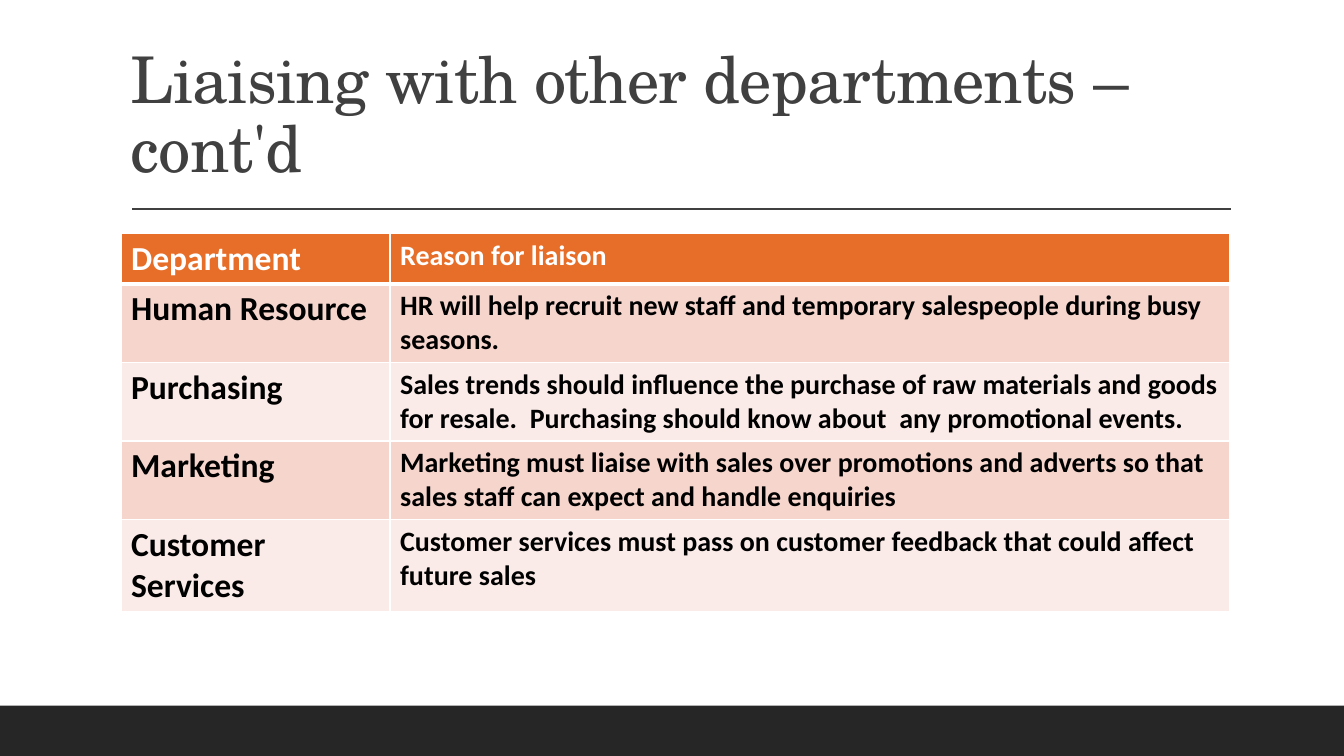
import dataclasses

import lxml.etree
import pptx
import pptx.dml.color
import pptx.enum.shapes
import pptx.enum.text
import pptx.oxml.ns
import pptx.util

Cm = pptx.util.Cm
Pt = pptx.util.Pt

COLOURS = {
    "ink": "404040",
    "footer": "262626",
    "header": "E76E29",
    "odd": "F6D5CD",
    "even": "FAEBE8",
    "white": "FFFFFF",
    "black": "000000",
}
TITLE_FONT = {"name": "TeX Gyre Schola", "size": Pt(46)}
DEPARTMENT_FONT = {"name": "Calibri", "size": Pt(24), "bold": True}
REASON_FONT = {**DEPARTMENT_FONT, "size": Pt(20)}
COLUMN_WIDTHS = (Cm(6.78), Cm(21.16))


@dataclasses.dataclass(frozen=True)
class Liaison:
    department: str
    reason: str
    height: float


LIAISONS = (
    Liaison("Department", "Reason for liaison", 1.27),
    Liaison(
        "Human Resource ",
        "HR will help recruit new staff and temporary salespeople during busy seasons.",
        1.98,
    ),
    Liaison(
        "Purchasing",
        "Sales trends should influence the purchase of raw materials and goods for resale.  "
        "Purchasing should know about  any promotional events.",
        1.98,
    ),
    Liaison(
        "Marketing",
        "Marketing must liaise with sales over promotions and adverts so that "
        "sales staff can expect and handle enquiries",
        1.98,
    ),
    Liaison(
        "Customer Services",
        "Customer services must pass on customer feedback that could affect future sales",
        2.32,
    ),
)


def rgb(colour: str) -> pptx.dml.color.RGBColor:
    return pptx.dml.color.RGBColor.from_string(COLOURS[colour])


def write(frame, text: str, font: dict, colour: str):
    run = frame.paragraphs[0].add_run()
    run.text = text
    for attribute, value in font.items():
        setattr(run.font, attribute, value)
    run.font.color.rgb = rgb(colour)
    return run


def add_borders(cell, bottom: float) -> None:
    qn = pptx.oxml.ns.qn
    properties = cell._tc.get_or_add_tcPr()
    for side, width in {"L": 1, "R": 1, "T": 1, "B": bottom}.items():
        border = lxml.etree.SubElement(properties, qn(f"a:ln{side}"), w=str(Pt(width)))
        solid = lxml.etree.SubElement(border, qn("a:solidFill"))
        lxml.etree.SubElement(solid, qn("a:srgbClr"), val=COLOURS["white"])


def add_footer(slide, width: int, height: int) -> None:
    band = Cm(1.27)
    footer = slide.shapes.add_shape(
        pptx.enum.shapes.MSO_SHAPE.RECTANGLE, 0, height - band, width, band
    )
    footer.shadow.inherit = False
    footer.fill.solid()
    footer.fill.fore_color.rgb = rgb("footer")
    footer.line.fill.background()


def add_title(slide) -> None:
    rule = slide.shapes.add_connector(
        pptx.enum.shapes.MSO_CONNECTOR.STRAIGHT, Cm(3.33), Cm(5.27), Cm(31.01), Cm(5.27)
    )
    rule.line.color.rgb = rgb("ink")
    rule.line.width = Pt(1)
    lxml.etree.SubElement(rule._element.spPr, pptx.oxml.ns.qn("a:effectLst"))

    title = slide.shapes.add_textbox(Cm(3.05), Cm(0.79), Cm(27.94), Cm(4.04)).text_frame
    title.word_wrap = True
    title.vertical_anchor = pptx.enum.text.MSO_ANCHOR.BOTTOM
    title.paragraphs[0].line_spacing = 0.9
    heading = write(title, "Liaising with other departments – cont'd", TITLE_FONT, "ink")
    heading._r.get_or_add_rPr().set("spc", "-50")


def add_liaisons(slide) -> None:
    table = slide.shapes.add_table(
        len(LIAISONS),
        len(COLUMN_WIDTHS),
        Cm(3.05),
        Cm(5.88),
        sum(COLUMN_WIDTHS),
        Cm(sum(liaison.height for liaison in LIAISONS)),
    ).table
    for column, width in zip(table.columns, COLUMN_WIDTHS):
        column.width = width
    for index, liaison in enumerate(LIAISONS):
        table.rows[index].height = Cm(liaison.height)
        is_header = index == 0
        fill = "header" if is_header else "odd" if index % 2 else "even"
        entries = ((liaison.department, DEPARTMENT_FONT), (liaison.reason, REASON_FONT))
        for cell, (text, font) in zip(table.rows[index].cells, entries):
            add_borders(cell, 3 if is_header else 1)
            cell.fill.solid()
            cell.fill.fore_color.rgb = rgb(fill)
            write(cell.text_frame, text, font, "white" if is_header else "black")


def main() -> None:
    deck = pptx.Presentation()
    deck.slide_width = Cm(33.87)
    deck.slide_height = Cm(19.05)
    slide = deck.slides.add_slide(deck.slide_layouts[6])
    add_footer(slide, deck.slide_width, deck.slide_height)
    add_title(slide)
    add_liaisons(slide)
    deck.save("out.pptx")


if __name__ == "__main__":
    main()
